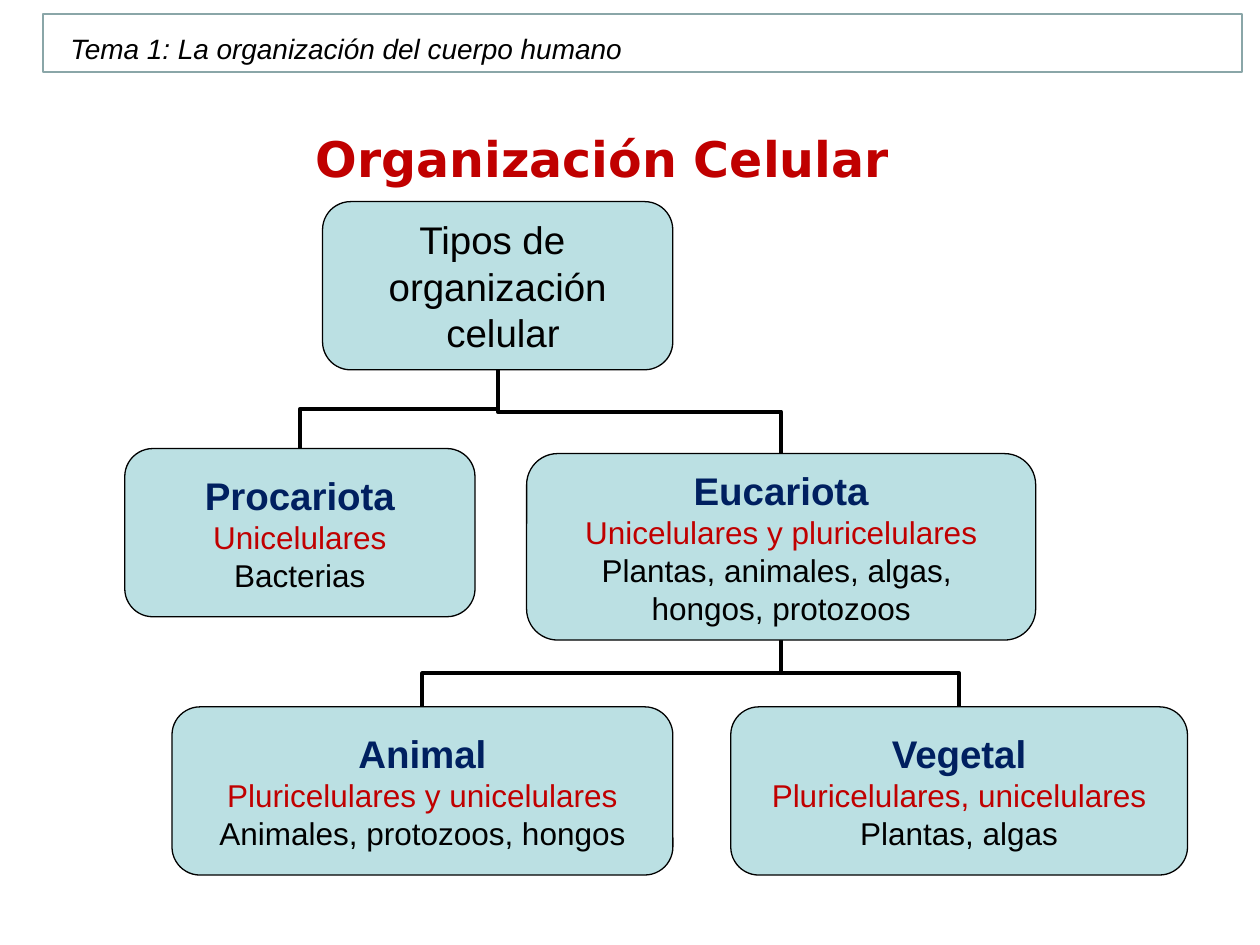
from dataclasses import dataclass

from pptx import Presentation
from pptx.dml.color import RGBColor
from pptx.enum.shapes import MSO_CONNECTOR, MSO_SHAPE
from pptx.enum.text import MSO_ANCHOR, PP_ALIGN
from pptx.oxml.ns import qn
from pptx.oxml.xmlchemy import OxmlElement
from pptx.util import Inches, Pt

COLORS = {
    "box": "BBE0E3",
    "ink": "000000",
    "name": "002060",
    "accent": "C00000",
    "paper": "FFFFFF",
    "frame": "8AA6A8",
}
FONT = "Arial"
TOP, BOTTOM = 0, 2  # connection sites

prs = Presentation()
prs.slide_width, prs.slide_height = Inches(10), Inches(7.5)
COL = prs.slide_width / 100  # grid of 100 columns
ROW = prs.slide_height / 75  # and 75 rows


@dataclass(frozen=True)
class Area:
    col: float
    row: float
    cols: float
    rows: float

    def emu(self) -> tuple[int, int, int, int]:
        return (round(self.col * COL), round(self.row * ROW),
                round(self.cols * COL), round(self.rows * ROW))


@dataclass(frozen=True)
class Line:
    text: str
    size: int = 18
    color: str = "ink"
    bold: bool = False
    italic: bool = False
    font: str = FONT


@dataclass(frozen=True)
class Node:
    area: Area
    lines: list[Line]
    parent: str = ""


def cell_type(name: str, cells: str, *examples: str) -> list[Line]:
    return [Line(name, 22, "name", True), Line(cells, color="accent"),
            *(Line(example) for example in examples)]


NODES = {
    "root": Node(Area(25.6, 16, 27.8, 13.35),
                 [Line(text, 22) for text in ("Tipos de ", "organización", " celular")]),
    "procariota": Node(Area(9.9, 35.6, 27.8, 13.35),
                       cell_type("Procariota", "Unicelulares", "Bacterias"), "root"),
    "eucariota": Node(Area(41.8, 36, 40.4, 14.8),
                      cell_type("Eucariota", "Unicelulares y pluricelulares",
                                "Plantas, animales, algas, ", "hongos, protozoos"), "root"),
    "animal": Node(Area(13.65, 56.1, 39.75, 13.35),
                   cell_type("Animal", "Pluricelulares y unicelulares",
                             "Animales, protozoos, hongos"), "eucariota"),
    "vegetal": Node(Area(58, 56.1, 36.25, 13.35),
                    cell_type("Vegetal", "Pluricelulares, unicelulares",
                              "Plantas, algas"), "eucariota"),
}


def rgb(name: str) -> RGBColor:
    return RGBColor.from_string(COLORS[name])


def write(frame, lines: list[Line], align: PP_ALIGN) -> None:
    frame.text = "\n".join(line.text for line in lines)
    for paragraph, line in zip(frame.paragraphs, lines):
        paragraph.alignment = align
        font = paragraph.runs[0].font
        font.name, font.size = line.font, Pt(line.size)
        font.bold, font.italic = line.bold, line.italic
        font.color.rgb = rgb(line.color)


def draw_box(slide, kind: MSO_SHAPE, area: Area, fill: str, edge: str, width: float):
    box = slide.shapes.add_shape(kind, *area.emu())
    box.shadow.inherit = False
    box.fill.solid()
    box.fill.fore_color.rgb = rgb(fill)
    box.line.color.rgb = rgb(edge)
    box.line.width = Pt(width)
    return box


def draw_node(slide, node: Node):
    box = draw_box(slide, MSO_SHAPE.ROUNDED_RECTANGLE, node.area, "box", "ink", 0.75)
    frame = box.text_frame
    frame.margin_left = frame.margin_right = frame.margin_top = frame.margin_bottom = 0
    frame.word_wrap = False
    frame.vertical_anchor = MSO_ANCHOR.MIDDLE
    write(frame, node.lines, PP_ALIGN.CENTER)
    return box


def link(slide, child, parent) -> None:
    """Join the child's top to the parent's bottom with an upright elbow."""
    elbow = slide.shapes.add_connector(MSO_CONNECTOR.ELBOW, 0, 0, 0, 0)
    elbow.begin_connect(child, TOP)
    elbow.end_connect(parent, BOTTOM)
    elbow.line.color.rgb = rgb("ink")
    elbow.line.width = Pt(2.25)
    properties = elbow._element.spPr
    properties.append(OxmlElement("a:effectLst"))

    # A quarter turn makes the elbow leave and arrive vertically
    x1, y1, x2, y2 = elbow.begin_x, elbow.begin_y, elbow.end_x, elbow.end_y
    length, spread = abs(y1 - y2), abs(x1 - x2)
    elbow.left, elbow.top = (x1 + x2 - length) // 2, (y1 + y2 - spread) // 2
    elbow.width, elbow.height = length, spread
    child_on_right = x1 > x2
    transform = properties.find(qn("a:xfrm"))
    transform.set("rot", str((270 if child_on_right else 90) * 60000))
    transform.set("flipH", "0" if child_on_right else "1")
    transform.set("flipV", "1")
    slide.shapes._spTree.insert(2, elbow._element)  # behind the boxes


def main() -> None:
    slide = prs.slides.add_slide(prs.slide_layouts[5])

    # Title
    title = slide.shapes.title
    title.left, title.top, title.width, title.height = Area(11.1, 9.7, 73.4, 5.7).emu()
    title.text_frame.vertical_anchor = MSO_ANCHOR.TOP
    write(title.text_frame,
          [Line("Organización Celular", 28, "accent", True, font="DejaVu Sans")],
          PP_ALIGN.CENTER)

    # Tree of cell types
    boxes = {key: draw_node(slide, node) for key, node in NODES.items()}
    for key, node in NODES.items():
        if node.parent:
            link(slide, boxes[key], boxes[node.parent])

    # Topic header
    draw_box(slide, MSO_SHAPE.RECTANGLE, Area(3.4, 1.1, 95.2, 4.6), "paper", "frame", 1)
    topic = slide.shapes.add_textbox(*Area(4.6, 2, 52.6, 3.7).emu())
    topic.text_frame.word_wrap = True
    write(topic.text_frame,
          [Line("Tema 1: La organización del cuerpo humano", 16, italic=True)],
          PP_ALIGN.LEFT)

    prs.save("out.pptx")


if __name__ == "__main__":
    main()
